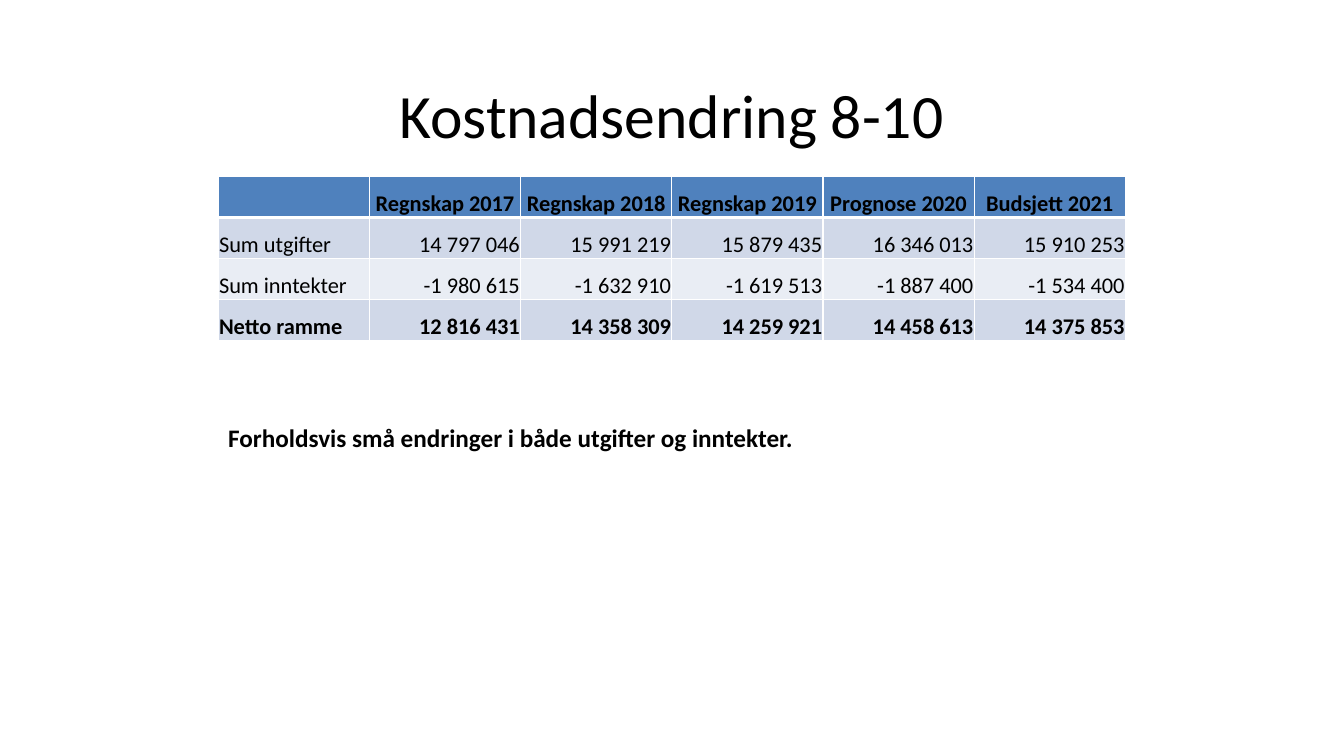
from lxml.etree import SubElement
from pptx import Presentation
from pptx.dml.color import RGBColor
from pptx.enum.text import MSO_ANCHOR as Anchor, MSO_AUTO_SIZE as AutoSize, PP_ALIGN as Align
from pptx.oxml.ns import qn
from pptx.util import Cm, Pt

FONT = "Calibri"
COLORS = {
    "text": "000000",
    "header": "4F81BD",
    "odd_row": "D0D8E8",
    "even_row": "E9EDF4",
    "border": "FFFFFF",
}
LEFT, WIDTH = Cm(5.5), Cm(22.86)
ROW_HEIGHT = Cm(1.03)
COST_ROWS = [
    ["", "Regnskap 2017", "Regnskap 2018", "Regnskap 2019", "Prognose 2020", "Budsjett 2021"],
    ["Sum utgifter", "14 797 046", "15 991 219", "15 879 435", "16 346 013", "15 910 253"],
    ["Sum inntekter", "-1 980 615", "-1 632 910", "-1 619 513", "-1 887 400", "-1 534 400"],
    ["Netto ramme", "12 816 431", "14 358 309", "14 259 921", "14 458 613", "14 375 853"],
]


def set_text(text_frame, text, size, bold=False, align=Align.LEFT):
    text_frame.text = text
    paragraph = text_frame.paragraphs[0]
    paragraph.alignment = align
    # An empty cell has no runs, so its size is set on the paragraph
    for font in [paragraph.font] + [run.font for run in paragraph.runs]:
        font.name, font.size, font.bold = FONT, Pt(size), bold
        font.color.rgb = RGBColor.from_string(COLORS["text"])


def set_borders(cell, widths):
    properties = cell._tc.get_or_add_tcPr()
    for side in ("L", "R", "T", "B"):
        line = SubElement(properties, qn(f"a:ln{side}"), w=str(Pt(widths[side])))
        fill = SubElement(line, qn("a:solidFill"))
        SubElement(fill, qn("a:srgbClr"), val=COLORS["border"])


def format_cell(cell, text, row, column):
    is_header, is_total = row == 0, row == len(COST_ROWS) - 1
    align = Align.CENTER if is_header else Align.RIGHT if column else Align.LEFT
    set_text(cell.text_frame, text, 16, is_header or is_total, align)
    cell.vertical_anchor = Anchor.BOTTOM
    cell.margin_left = cell.margin_right = cell.margin_top = Cm(0.02)
    cell.margin_bottom = 0
    set_borders(cell, {"L": 1, "R": 1, "T": 3 if row == 1 else 1, "B": 3 if is_header else 1})
    color = "header" if is_header else "odd_row" if row % 2 else "even_row"
    cell.fill.solid()
    cell.fill.fore_color.rgb = RGBColor.from_string(COLORS[color])


def add_title(slide, text):
    title = slide.shapes.title
    title.left, title.top, title.width, title.height = LEFT, Cm(1.27), WIDTH, Cm(3.18)
    title.text_frame.vertical_anchor = Anchor.MIDDLE
    set_text(title.text_frame, text, 44, align=Align.CENTER)


def add_cost_table(slide):
    row_count, column_count = len(COST_ROWS), len(COST_ROWS[0])
    table = slide.shapes.add_table(
        row_count, column_count, LEFT, Cm(4.45), WIDTH, ROW_HEIGHT * row_count
    ).table
    for row, texts in enumerate(COST_ROWS):
        for column, text in enumerate(texts):
            format_cell(table.cell(row, column), text, row, column)


def add_comment(slide, text):
    box = slide.shapes.add_textbox(LEFT, Cm(10.52), Cm(18.8), Cm(1.03))
    box.text_frame.word_wrap = True
    box.text_frame.auto_size = AutoSize.SHAPE_TO_FIT_TEXT
    set_text(box.text_frame, text, 18, bold=True)


def main():
    presentation = Presentation()
    presentation.slide_width, presentation.slide_height = Cm(33.87), Cm(19.05)
    title_only = presentation.slide_layouts[5]
    slide = presentation.slides.add_slide(title_only)

    # Heading, cost table and conclusion, from top to bottom
    add_title(slide, "Kostnadsendring 8-10")
    add_cost_table(slide)
    add_comment(slide, "Forholdsvis små endringer i både utgifter og inntekter.")

    presentation.save("out.pptx")


if __name__ == "__main__":
    main()
